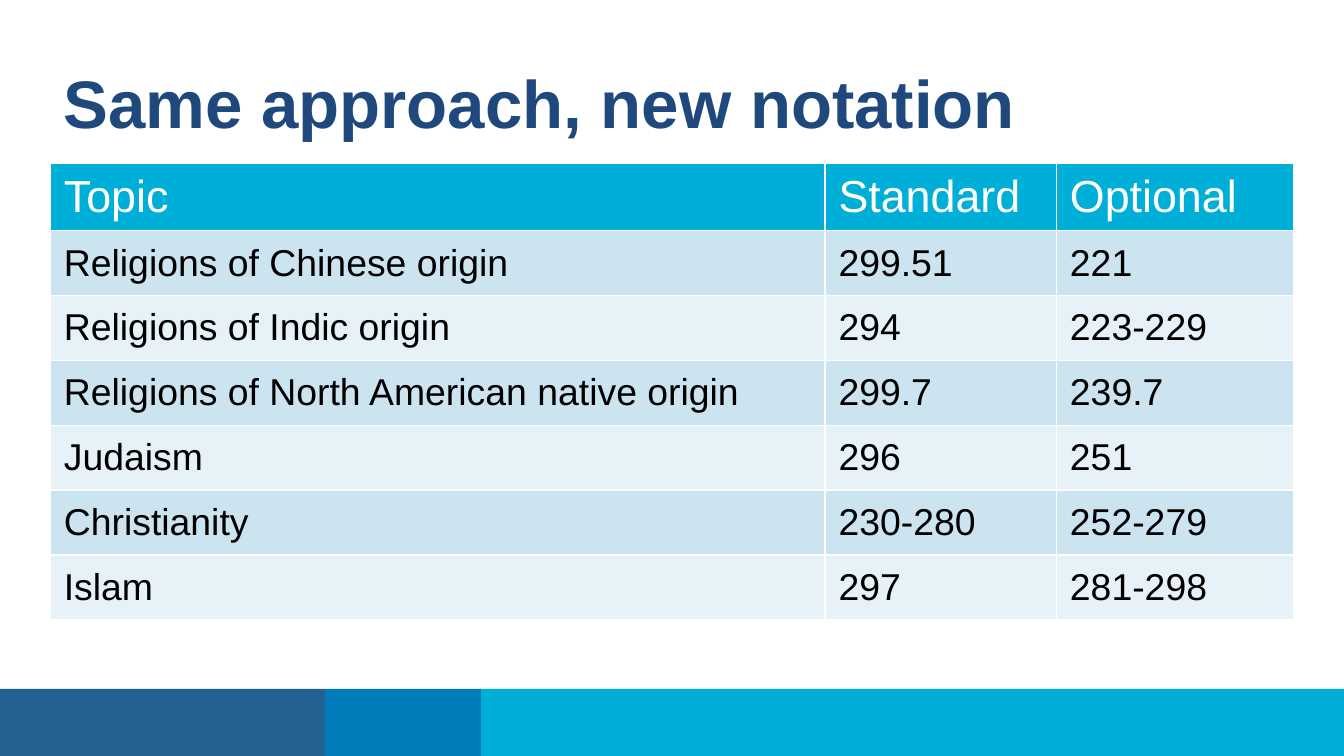
import pptx
import pptx.dml.color
import pptx.enum.shapes
import pptx.enum.text
import pptx.util
from lxml import etree
from pptx.oxml.ns import qn

Pt = pptx.util.Pt
COLORS = {
    "navy": "236192",
    "blue": "007DBA",
    "cyan": "00AFD7",
    "title": "1F497D",
    "white": "FFFFFF",
    "black": "000000",
    "odd_row": "CCE3F0",
    "even_row": "E7F2F8",
}
NOTATIONS = [
    ("Topic", "Standard", "Optional"),
    ("Religions of Chinese origin", "299.51", "221"),
    ("Religions of Indic origin", "294", "223-229"),
    ("Religions of North American native origin", "299.7", "239.7"),
    ("Judaism", "296", "251"),
    ("Christianity", "230-280", "252-279"),
    ("Islam", "297", "281-298"),
]


def rgb(name):
    """Return the named palette colour."""
    return pptx.dml.color.RGBColor.from_string(COLORS[name])


def write(frame, text, size, color, bold=False):
    """Write one Arial run into the first paragraph of a frame."""
    run = frame.paragraphs[0].add_run()
    run.text = text
    run.font.name = "Arial"
    run.font.size = Pt(size)
    run.font.bold = bold
    run.font.color.rgb = rgb(color)


def add_footer(slide, left, top, width, height):
    """Draw the three-coloured band; the last part fills the remaining width."""
    right = left + width
    for color, share in (("navy", 0.242), ("blue", 0.116), ("cyan", 0.642)):
        band_width = min(width * share, right - left)
        band = slide.shapes.add_shape(
            pptx.enum.shapes.MSO_SHAPE.RECTANGLE,
            Pt(left), Pt(top), Pt(band_width), Pt(height),
        )
        band.shadow.inherit = False
        band.fill.solid()
        band.fill.fore_color.rgb = rgb(color)
        band.line.fill.background()
        left += band_width


def add_title(slide, left, top, width, height):
    """Place the slide title, centred vertically in its box."""
    title = slide.shapes.add_textbox(Pt(left), Pt(top), Pt(width), Pt(height))
    frame = title.text_frame
    frame.word_wrap = True
    frame.vertical_anchor = pptx.enum.text.MSO_ANCHOR.MIDDLE
    write(frame, "Same approach, new notation", 36, "title", bold=True)


def add_borders(cell):
    """Give a cell a thin white line on every side."""
    properties = cell._tc.get_or_add_tcPr()
    for side in ("a:lnL", "a:lnR", "a:lnT", "a:lnB"):
        line = etree.SubElement(properties, qn(side), w=str(Pt(1)))
        fill = etree.SubElement(line, qn("a:solidFill"))
        etree.SubElement(fill, qn("a:srgbClr"), val=COLORS["white"])


def add_notations(slide, left, top, width, height):
    """Build the table of standard and optional notations."""
    table = slide.shapes.add_table(
        len(NOTATIONS), len(NOTATIONS[0]), Pt(left), Pt(top), Pt(width), Pt(height)
    ).table
    standard_width, optional_width = 124, 127
    topic_width = width - standard_width - optional_width
    for column, column_width in zip(
        table.columns, (topic_width, standard_width, optional_width)
    ):
        column.width = Pt(column_width)
    for index, entries in enumerate(NOTATIONS):
        table.rows[index].height = Pt(height / len(NOTATIONS))
        if index == 0:
            background, size, color = "cyan", 24, "white"
        else:
            background = "odd_row" if index % 2 else "even_row"
            size, color = 20, "black"
        for position, entry in enumerate(entries):
            cell = table.cell(index, position)
            add_borders(cell)
            cell.fill.solid()
            cell.fill.fore_color.rgb = rgb(background)
            cell.vertical_anchor = pptx.enum.text.MSO_ANCHOR.MIDDLE
            write(cell.text_frame, entry, size, color)


def main():
    """Build and save the slide."""
    deck = pptx.Presentation()
    deck.slide_width, deck.slide_height = Pt(720), Pt(405)
    slide = deck.slides.add_slide(deck.slide_layouts[6])
    add_footer(slide, 0, 369, 720, 36)
    add_title(slide, 27, 27.5, 664.5, 54)
    add_notations(slide, 27, 87.5, 666, 243.6)
    deck.save("out.pptx")


if __name__ == "__main__":
    main()
